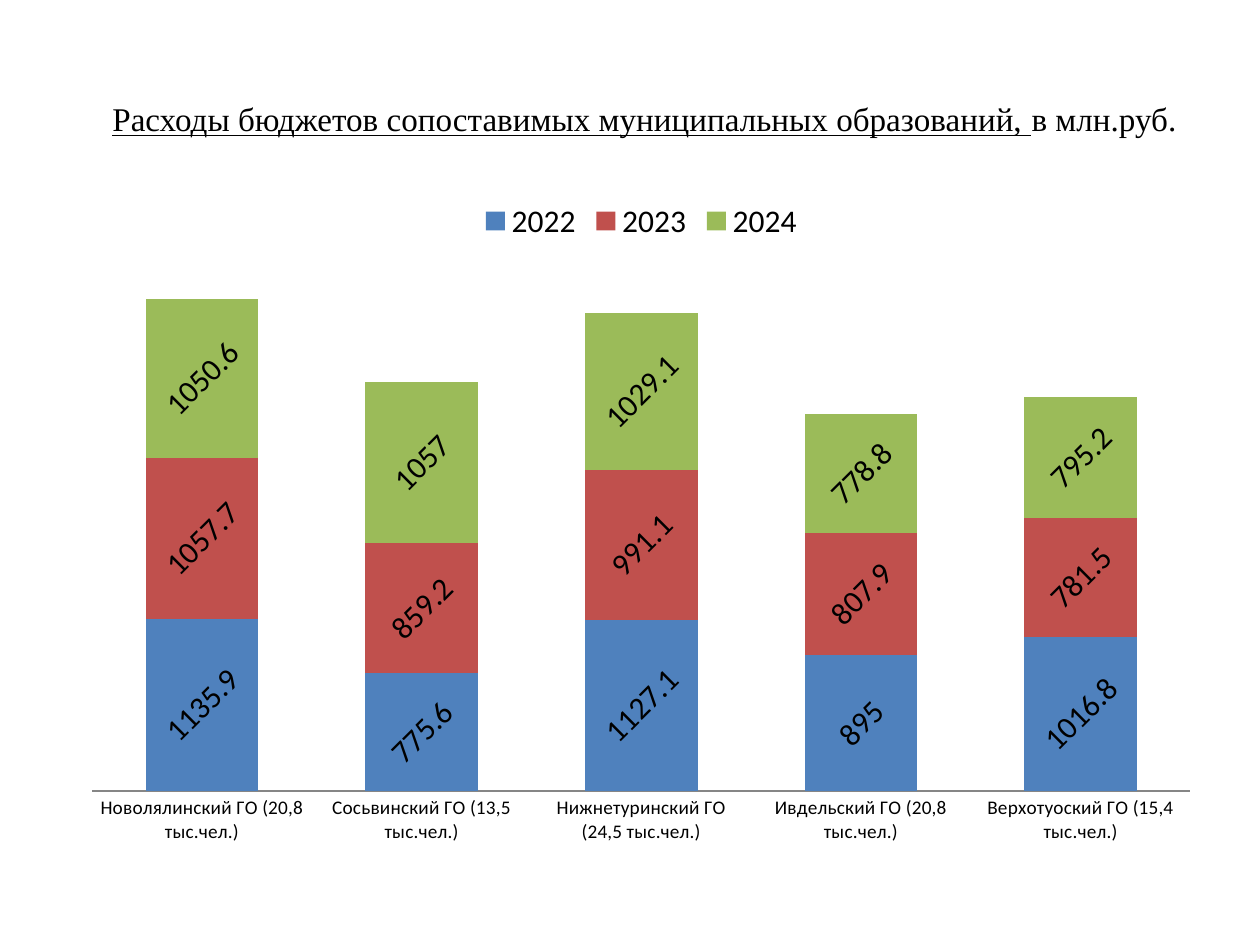
from dataclasses import dataclass

from pptx import Presentation
from pptx.chart.data import CategoryChartData
from pptx.dml.color import RGBColor
from pptx.enum.chart import XL_CHART_TYPE as ChartType
from pptx.enum.chart import XL_LABEL_POSITION as LabelPosition
from pptx.enum.chart import XL_LEGEND_POSITION as LegendPosition
from pptx.enum.chart import XL_TICK_MARK as TickMark
from pptx.enum.text import MSO_ANCHOR as Anchor
from pptx.enum.text import PP_ALIGN as Align
from pptx.util import Inches, Pt

MUNICIPALITIES = [
    "Новолялинский ГО (20,8 тыс.чел.)",
    "Сосьвинский ГО (13,5 тыс.чел.)",
    "Нижнетуринский ГО (24,5 тыс.чел.)",
    "Ивдельский ГО (20,8 тыс.чел.)",
    "Верхотуоский ГО (15,4 тыс.чел.)",
]
EXPENSES = {
    "2022": [1135.9, 775.6, 1127.1, 895, 1016.8],
    "2023": [1057.7, 859.2, 991.1, 807.9, 781.5],
    "2024": [1050.6, 1057, 1029.1, 778.8, 795.2],
}


@dataclass(frozen=True)
class Theme:
    title_font: str = "Times New Roman"
    chart_font: str = "Calibri"
    title_size: float = 18.9
    chart_size: float = 18
    category_size: float = 11
    ink: str = "000000"
    axis: str = "868686"
    years: tuple = ("4F81BD", "C0504D", "9BBB59")


class SlideBuilder:
    """Adds styled elements to one slide."""

    def __init__(self, slide, theme):
        self.slide = slide
        self.theme = theme

    def style(self, font, name, size):
        font.name = name
        font.size = Pt(size)
        font.bold = False
        font.color.rgb = RGBColor.from_string(self.theme.ink)

    def title(self, underlined, plain, left, top, width, height):
        heading = self.slide.shapes.title
        heading.left, heading.top = Inches(left), Inches(top)
        heading.width, heading.height = Inches(width), Inches(height)
        frame = heading.text_frame
        frame.word_wrap = True
        frame.vertical_anchor = Anchor.BOTTOM
        frame.margin_bottom = Inches(0.15)
        line = frame.paragraphs[0]
        line.alignment = Align.CENTER
        self.style(line.font, self.theme.title_font, self.theme.title_size)
        for wording, underline in ((underlined, True), (plain, False)):
            run = line.add_run()
            run.text = wording
            run.font.underline = underline

    def stacked_columns(self, categories, values_by_year, left, top, width, height):
        expenses = CategoryChartData()
        expenses.categories = categories
        for year, values in values_by_year.items():
            expenses.add_series(year, values)
        chart = self.slide.shapes.add_chart(
            ChartType.COLUMN_STACKED, Inches(left), Inches(top),
            Inches(width), Inches(height), expenses).chart
        self.style(chart.font, self.theme.chart_font, self.theme.chart_size)
        chart.has_title = False
        chart.has_legend = True
        chart.legend.position = LegendPosition.TOP
        chart.legend.include_in_layout = False
        self.axes(chart)
        columns = chart.plots[0]
        columns.gap_width, columns.overlap = 95, 100
        columns.vary_by_categories = False
        for year, color in zip(columns.series, self.theme.years):
            year.format.fill.solid()
            year.format.fill.fore_color.rgb = RGBColor.from_string(color)
            self.slanted_labels(year.data_labels)

    def axes(self, chart):
        scale = chart.value_axis
        scale.visible = False
        scale.has_major_gridlines = False
        scale.minimum_scale, scale.maximum_scale = 0, 3500
        base = chart.category_axis
        base.major_tick_mark = base.minor_tick_mark = TickMark.NONE
        base.format.line.color.rgb = RGBColor.from_string(self.theme.axis)
        base.format.line.width = Pt(0.75)
        self.style(base.tick_labels.font, self.theme.chart_font, self.theme.category_size)

    def slanted_labels(self, labels):
        labels.show_value = True
        labels.position = LabelPosition.CENTER
        self.style(labels.font, self.theme.chart_font, self.theme.chart_size)
        body = labels._element.txPr.bodyPr
        body.set("rot", "-2700000")
        body.set("vert", "horz")


def main():
    deck = Presentation()
    deck.slide_width, deck.slide_height = Inches(10), Inches(7.5)
    builder = SlideBuilder(deck.slides.add_slide(deck.slide_layouts[5]), Theme())
    builder.title("Расходы бюджетов сопоставимых муниципальных образований, ",
                  "в млн.руб.", 0.7, 0.31, 8.83, 0.94)
    builder.stacked_columns(MUNICIPALITIES, EXPENSES, 0.55, 1.48, 9.08, 5.32)
    deck.save("out.pptx")


if __name__ == "__main__":
    main()
